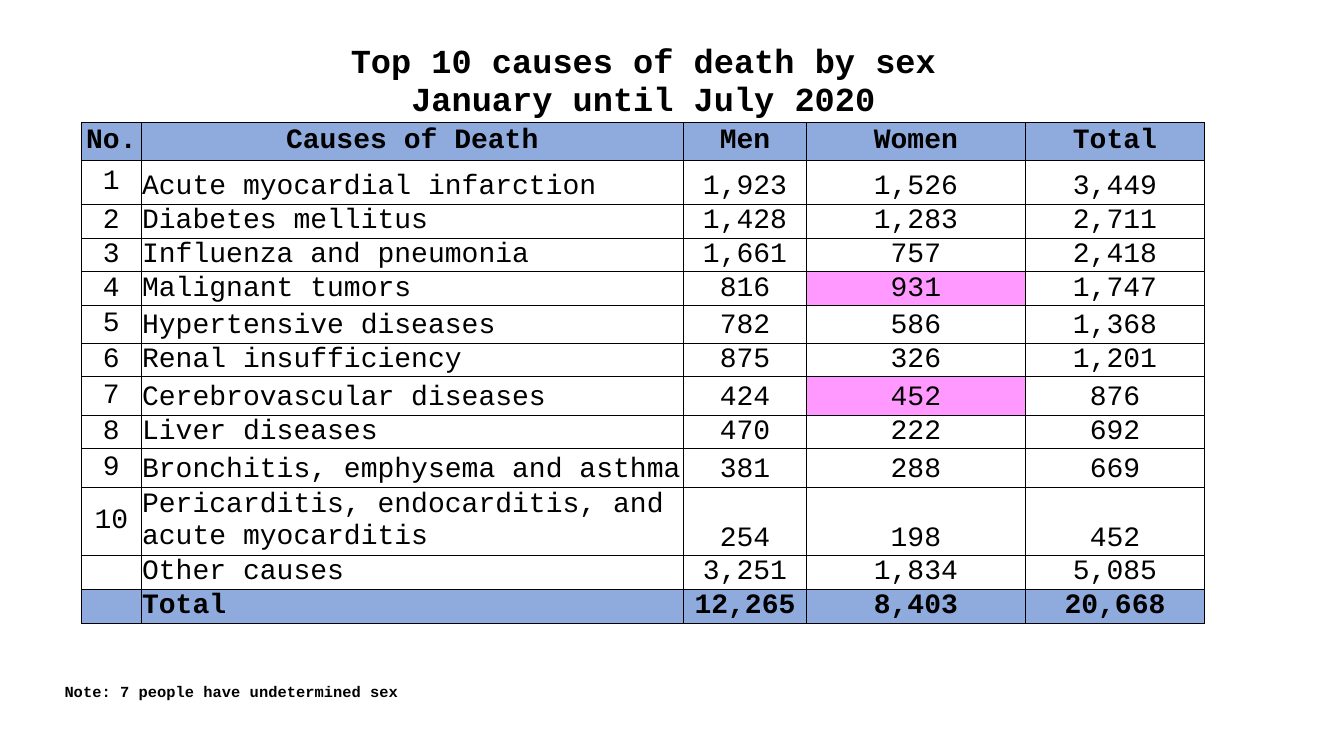
"""Build a slide with a table of the leading causes of death by sex."""
from dataclasses import dataclass
from typing import Any

from pptx import Presentation, util as u
from pptx.dml.color import RGBColor
from pptx.enum import text as t
from pptx.oxml import parse_xml
from pptx.oxml.ns import nsdecls

FONT = "Courier New"
BLACK, BLUE, PINK = "000000", "8FAADC", "FF99FF"
MIDDLE, BOTTOM = t.MSO_ANCHOR.MIDDLE, t.MSO_ANCHOR.BOTTOM
LEFT, CENTER = t.PP_ALIGN.LEFT, t.PP_ALIGN.CENTER
MARGINS = ("margin_left", "margin_right", "margin_top", "margin_bottom")
COLUMN_WIDTHS = (0.59, 5.38, 1.22, 2.17, 1.78)
HEADING = "Top 10 causes of death by sex\nJanuary until July 2020"
NOTE = "Note: 7 people have undetermined sex"


@dataclass(frozen=True)
class CauseRow:
    number: str
    cause: str
    men: str
    women: str
    total: str
    height: float = 0.32
    band: bool = False
    header: bool = False
    women_lead: bool = False
    cause_anchor: t.MSO_ANCHOR = BOTTOM

    def values(self) -> tuple[str, ...]:
        return self.number, self.cause, self.men, self.women, self.total

    def fill(self, column: int) -> str | None:
        if self.women_lead and column == 3:
            return PINK
        return BLUE if self.band else None

    def anchor(self, column: int) -> t.MSO_ANCHOR:
        if self.header or column == 0:
            return MIDDLE
        return self.cause_anchor if column == 1 else BOTTOM

    def align(self, column: int) -> t.PP_ALIGN:
        return LEFT if column == 1 and not self.header else CENTER


CAUSES = (
    CauseRow("No.", "Causes of Death", "Men", "Women", "Total", 0.37, band=True, header=True),
    CauseRow("1", "Acute myocardial infarction", "1,923", "1,526", "3,449", 0.44),
    CauseRow("2", "Diabetes mellitus", "1,428", "1,283", "2,711"),
    CauseRow("3", "Influenza and pneumonia", "1,661", "757", "2,418"),
    CauseRow("4", "Malignant tumors", "816", "931", "1,747", women_lead=True),
    CauseRow("5", "Hypertensive diseases", "782", "586", "1,368", 0.37),
    CauseRow("6", "Renal insufficiency", "875", "326", "1,201"),
    CauseRow("7", "Cerebrovascular diseases", "424", "452", "876", 0.38, women_lead=True),
    CauseRow("8", "Liver diseases", "470", "222", "692"),
    CauseRow("9", "Bronchitis, emphysema and asthma", "381", "288", "669", 0.38),
    CauseRow("10", "Pericarditis, endocarditis, and acute myocarditis", "254", "198", "452",
             0.68, cause_anchor=MIDDLE),
    CauseRow("", "Other causes", "3,251", "1,834", "5,085"),
    CauseRow("", "Total", "12,265", "8,403", "20,668", band=True),
)


def rgb(value: str) -> RGBColor:
    """Turn a hex string into a colour."""
    return RGBColor.from_string(value)


def apply(target: Any, values: dict[str, Any]) -> None:
    """Set each named attribute on the target."""
    for name, value in values.items():
        setattr(target, name, value)


def write(frame: Any, words: str, size: float, bold: bool, align: t.PP_ALIGN) -> None:
    """Fill a text frame with one paragraph per line of words."""
    frame.text = words
    for paragraph in frame.paragraphs:
        paragraph.alignment = align
        for run in paragraph.runs:
            apply(run.font, {"name": FONT, "size": u.Pt(size), "bold": bold})
            run.font.color.rgb = rgb(BLACK)


def format_cell(cell: Any, anchor: t.MSO_ANCHOR, fill: str | None, edges: str) -> None:
    """Set margins, anchor, borders on the named edges, and fill."""
    apply(cell, dict.fromkeys(MARGINS, u.Inches(0.01)) | {"vertical_anchor": anchor})
    properties = cell._tc.get_or_add_tcPr()
    for edge in "LRTB":
        paint = f'<a:solidFill><a:srgbClr val="{BLACK}"/></a:solidFill>' if edge in edges else "<a:noFill/>"
        properties.append(parse_xml(f'<a:ln{edge} {nsdecls("a")} w="{u.Pt(0.5)}">{paint}</a:ln{edge}>'))
    if fill:
        cell.fill.solid()
        cell.fill.fore_color.rgb = rgb(fill)
    else:
        cell.fill.background()


def add_causes_table(slide: Any) -> None:
    """Draw the heading row and the rows of causes."""
    heights = (0.77, *(row.height for row in CAUSES))
    causes = slide.shapes.add_table(
        len(heights), len(COLUMN_WIDTHS), u.Inches(0.81), u.Inches(0.44),
        u.Inches(sum(COLUMN_WIDTHS)), u.Inches(sum(heights))).table
    apply(causes, {"first_row": False, "horz_banding": False})
    for column, width in zip(causes.columns, COLUMN_WIDTHS):
        column.width = u.Inches(width)
    for line, height in zip(causes.rows, heights):
        line.height = u.Inches(height)

    for heading_cell in causes.rows[0].cells:
        format_cell(heading_cell, MIDDLE, None, "B")
    heading = causes.cell(0, 0)
    heading.merge(causes.cell(0, len(COLUMN_WIDTHS) - 1))
    write(heading.text_frame, HEADING, 24, True, CENTER)

    for index, row in enumerate(CAUSES, start=1):
        for column, value in enumerate(row.values()):
            cell = causes.cell(index, column)
            format_cell(cell, row.anchor(column), row.fill(column), "LRTB")
            write(cell.text_frame, value, 20, row.band, row.align(column))


def add_note(slide: Any) -> None:
    """Draw the note below the table."""
    note = slide.shapes.add_textbox(u.Inches(0.59), u.Inches(6.72), u.Inches(6.56), u.Inches(0.29)).text_frame
    apply(note, dict.fromkeys(MARGINS, u.Inches(0.05)) | {
        "word_wrap": True, "auto_size": t.MSO_AUTO_SIZE.SHAPE_TO_FIT_TEXT})
    write(note, NOTE, 11, True, LEFT)


def main() -> None:
    """Build and save the slide."""
    deck = Presentation()
    apply(deck, {"slide_width": u.Inches(13.33), "slide_height": u.Inches(7.5)})
    slide = deck.slides.add_slide(deck.slide_layouts[6])
    add_causes_table(slide)
    add_note(slide)
    deck.save("out.pptx")


if __name__ == "__main__":
    main()
